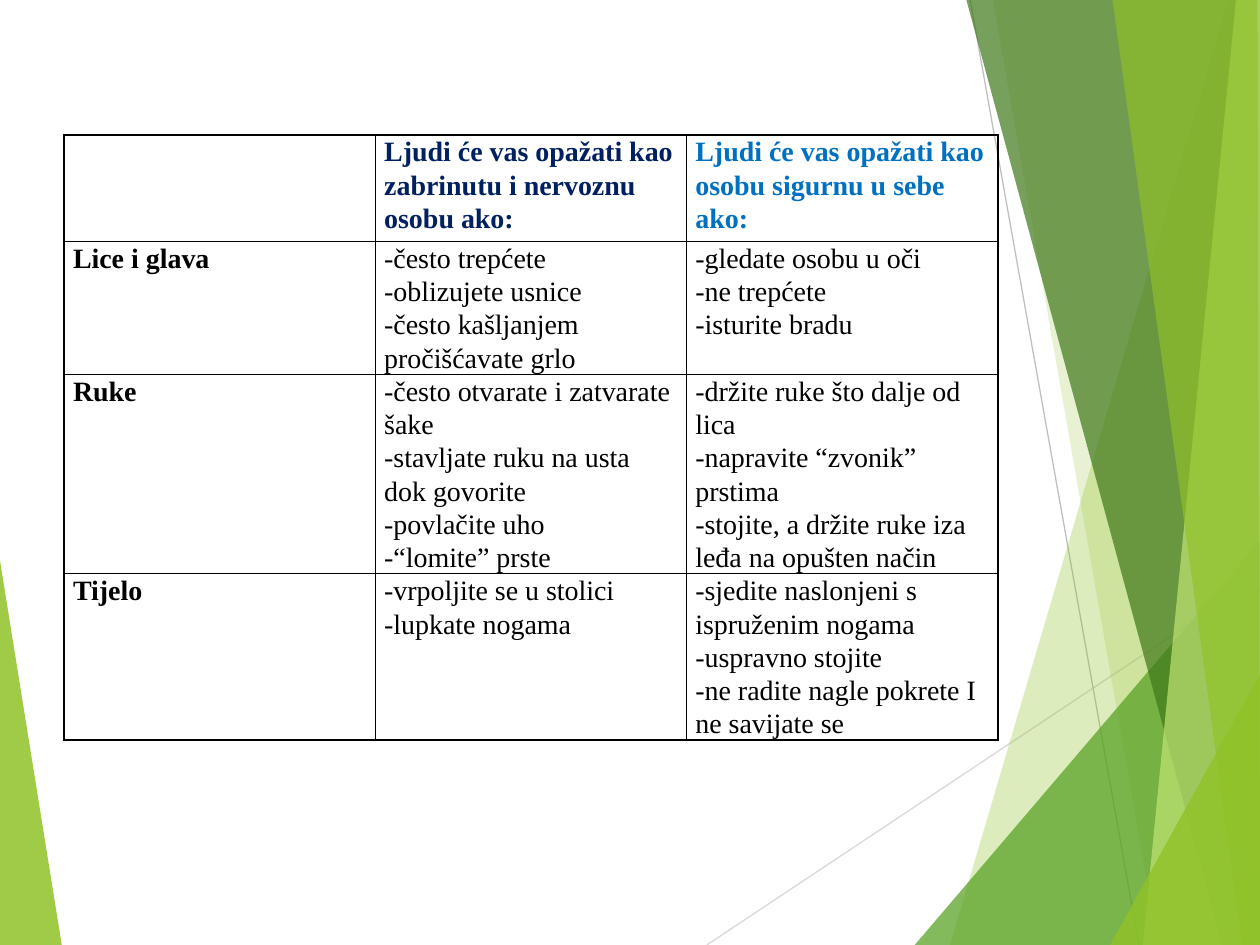
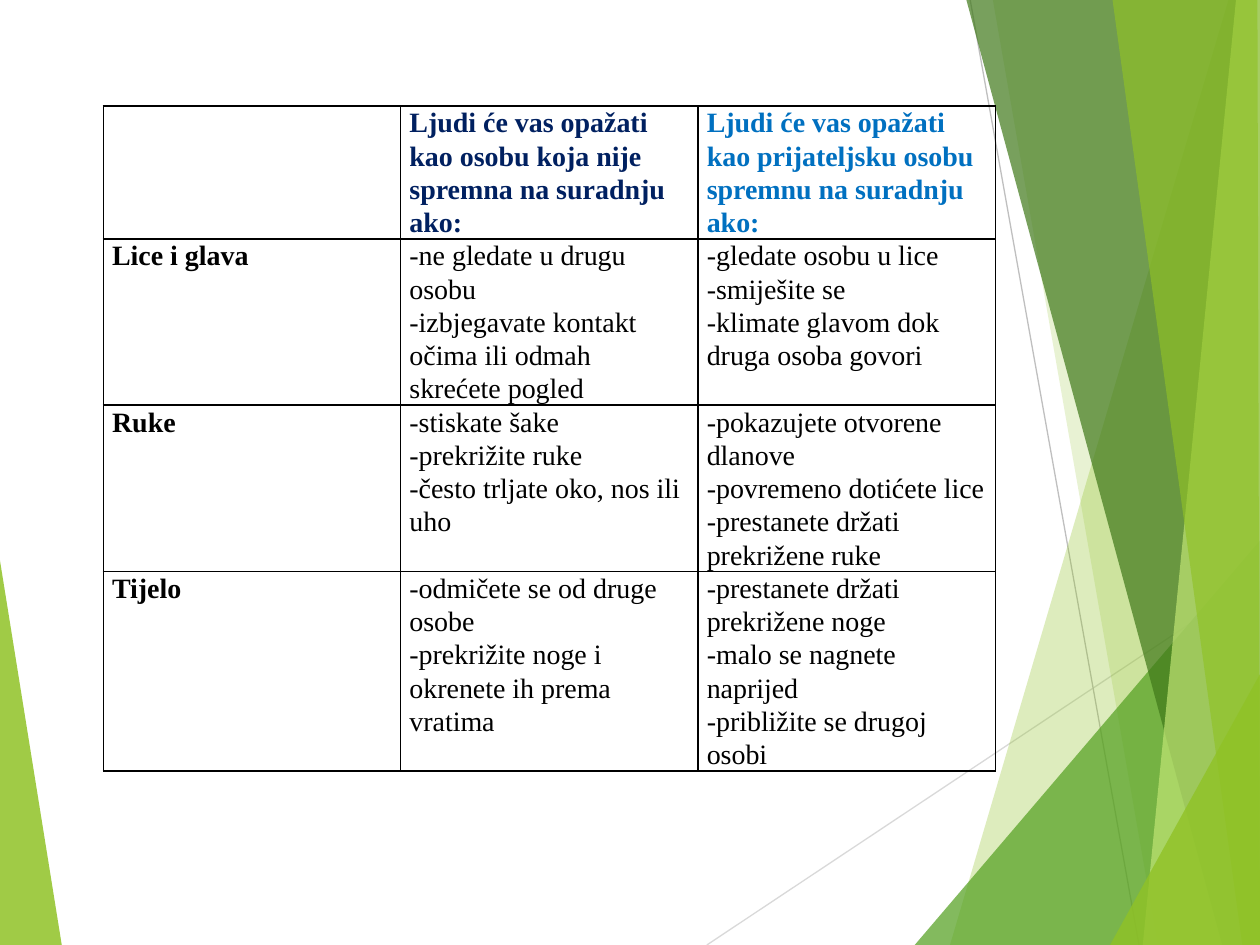
"""Build two slides with body-language tables on a green faceted layout."""
from pptx import Presentation
from pptx.dml.color import RGBColor
from pptx.enum.shapes import MSO_CONNECTOR
from pptx.oxml import parse_xml
from pptx.oxml.ns import nsdecls, qn
from pptx.util import Inches, Pt

STRAIGHT = MSO_CONNECTOR.STRAIGHT
NS = nsdecls("a")
CELL = Inches(0.1)
COLS, ROWS = 100, 75
LINE = Inches(0.26)
FONT = "Times New Roman"

LIME = RGBColor(0x90, 0xC2, 0x26)
GREEN = RGBColor(0x54, 0xA0, 0x21)
DARK = RGBColor(0x3F, 0x78, 0x19)
PALE = RGBColor(0xC0, 0xE4, 0x74)
SILVER = RGBColor(0xD9, 0xD9, 0xD9)
GRAY = RGBColor(0xBF, 0xBF, 0xBF)
BLACK = RGBColor(0, 0, 0)
NAVY = RGBColor(0x00, 0x20, 0x60)
BLUE = RGBColor(0x00, 0x70, 0xC0)

WEDGE = (LIME, 85, [(0, 44.5), (4.9, ROWS), (0, ROWS)])
RAYS = [
    (SILVER, (56.1, ROWS), (COLS, 45.8)),
    (GRAY, (77, 0), (90.4, ROWS)),
]
FACETS = [
    (LIME, 30, [(97.5, 0), (75.4, ROWS), (COLS, ROWS), (COLS, 0)]),
    (LIME, 20, [(78.8, 0), (91.9, ROWS), (COLS, ROWS), (COLS, 0)]),
    (GREEN, 72, [(72.6, ROWS), (COLS, 42.9), (COLS, ROWS)]),
    (DARK, 70, [(76.7, 0), (97, ROWS), (COLS, ROWS), (COLS, 0)]),
    (PALE, 70, [(98.1, 0), (90.7, ROWS), (COLS, ROWS), (COLS, 0)]),
    (LIME, 65, [(88.3, 0), (98.6, ROWS), (COLS, ROWS), (99.8, 0)]),
    (LIME, 80, [(88.1, ROWS), (COLS, 53.5), (COLS, ROWS)]),
]

PAGES = [
    {
        "left": 5.1, "top": 10.7, "col": 24.7, "lines": (3.25, 4, 6, 5),
        "rows": [
            ("", "Ljudi će vas opažati kao zabrinutu i nervoznu osobu ako:",
             "Ljudi će vas opažati kao osobu sigurnu u sebe ako:"),
            ("Lice i glava",
             "-često trepćete\n-oblizujete usnice\n-često kašljanjem pročišćavate grlo",
             "-gledate osobu u oči\n-ne trepćete\n-isturite bradu"),
            ("Ruke",
             "-često otvarate i zatvarate šake\n-stavljate ruku na usta dok govorite\n"
             "-povlačite uho\n-“lomite” prste",
             "-držite ruke što dalje od lica\n-napravite “zvonik” prstima\n"
             "-stojite, a držite ruke iza leđa na opušten način"),
            ("Tijelo",
             "-vrpoljite se u stolici\n-lupkate nogama",
             "-sjedite naslonjeni s ispruženim nogama\n-uspravno stojite\n"
             "-ne radite nagle pokrete I ne savijate se"),
        ],
    },
    {
        "left": 8.2, "top": 8.4, "col": 23.6, "lines": (4, 5, 5, 6),
        "rows": [
            ("", "Ljudi će vas opažati kao osobu koja nije spremna na suradnju ako:",
             "Ljudi će vas opažati kao prijateljsku osobu spremnu na suradnju ako:"),
            ("Lice i glava",
             "-ne gledate u drugu osobu\n"
             "-izbjegavate kontakt očima ili odmah skrećete pogled",
             "-gledate osobu u lice\n-smiješite se\n-klimate glavom dok druga osoba govori"),
            ("Ruke",
             "-stiskate šake\n-prekrižite ruke\n-često trljate oko, nos ili uho",
             "-pokazujete otvorene dlanove\n-povremeno dotićete lice\n"
             "-prestanete držati prekrižene ruke"),
            ("Tijelo",
             "-odmičete se od druge osobe\n-prekrižite noge i okrenete ih prema vratima",
             "-prestanete držati prekrižene noge\n-malo se nagnete naprijed\n"
             "-približite se drugoj osobi"),
        ],
    },
]


def add_facet(shapes, color, alpha, points):
    spots = [(round(x * CELL), round(y * CELL)) for x, y in points]
    pen = shapes.build_freeform(*spots[0])
    pen.add_line_segments(spots[1:], close=True)
    facet = pen.convert_to_shape()
    facet.shadow.inherit = False
    facet.line.fill.background()
    facet.fill.solid()
    facet.fill.fore_color.rgb = color
    tint = next(facet.element.iter(qn("a:srgbClr")))
    tint.append(parse_xml(f'<a:alpha {NS} val="{alpha * 1000}"/>'))


def fill_cell(cell, text, color, bold):
    form = {"margin_left": Inches(0.07), "margin_right": Inches(0.07),
            "margin_top": 0, "margin_bottom": 0, "text": text}
    for name, value in form.items():
        setattr(cell, name, value)
    cell.fill.background()
    props = cell._tc.get_or_add_tcPr()
    for spot, side in enumerate("LRTB"):
        props.insert(spot, parse_xml(
            f'<a:ln{side} {NS} w="{Pt(1)}"><a:solidFill><a:srgbClr val="{BLACK}"/>'
            f'</a:solidFill></a:ln{side}>'))
    for para in cell.text_frame.paragraphs:
        para.line_spacing = 1.07
        for run in para.runs:
            for name, value in {"name": FONT, "size": Pt(16), "bold": bold}.items():
                setattr(run.font, name, value)
            run.font.color.rgb = color


deck = Presentation()
deck.slide_width = COLS * CELL
deck.slide_height = ROWS * CELL
blank = deck.slide_layouts[6]
slides = [deck.slides.add_slide(blank) for page in PAGES]

shapes = slides[0].shapes
add_facet(shapes, *WEDGE)
for color, start, end in RAYS:
    ray = shapes.add_connector(STRAIGHT, *[round(n * CELL) for n in start + end])
    ray.line.color.rgb = color
    ray.line.width = Pt(0.75)
    ray.element.spPr.append(parse_xml(f"<a:effectLst {NS}/>"))
for facet in FACETS:
    add_facet(shapes, *facet)
for shape in list(shapes):
    blank.shapes.element.append(shape.element)

for slide, page in zip(slides, PAGES):
    rows, lines = page["rows"], page["lines"]
    width = round(page["col"] * CELL)
    frame = slide.shapes.add_table(
        len(rows), 3, round(page["left"] * CELL), round(page["top"] * CELL),
        3 * width, round(sum(lines) * LINE))
    table = frame.table
    table.first_row = table.horz_banding = False
    for col in table.columns:
        col.width = width
    for r, texts in enumerate(rows):
        table.rows[r].height = round(lines[r] * LINE)
        for c, text in enumerate(texts):
            color = (BLACK, NAVY, BLUE)[c] if r == 0 else BLACK
            fill_cell(table.cell(r, c), text, color, r == 0 or c == 0)

deck.save("out.pptx")
